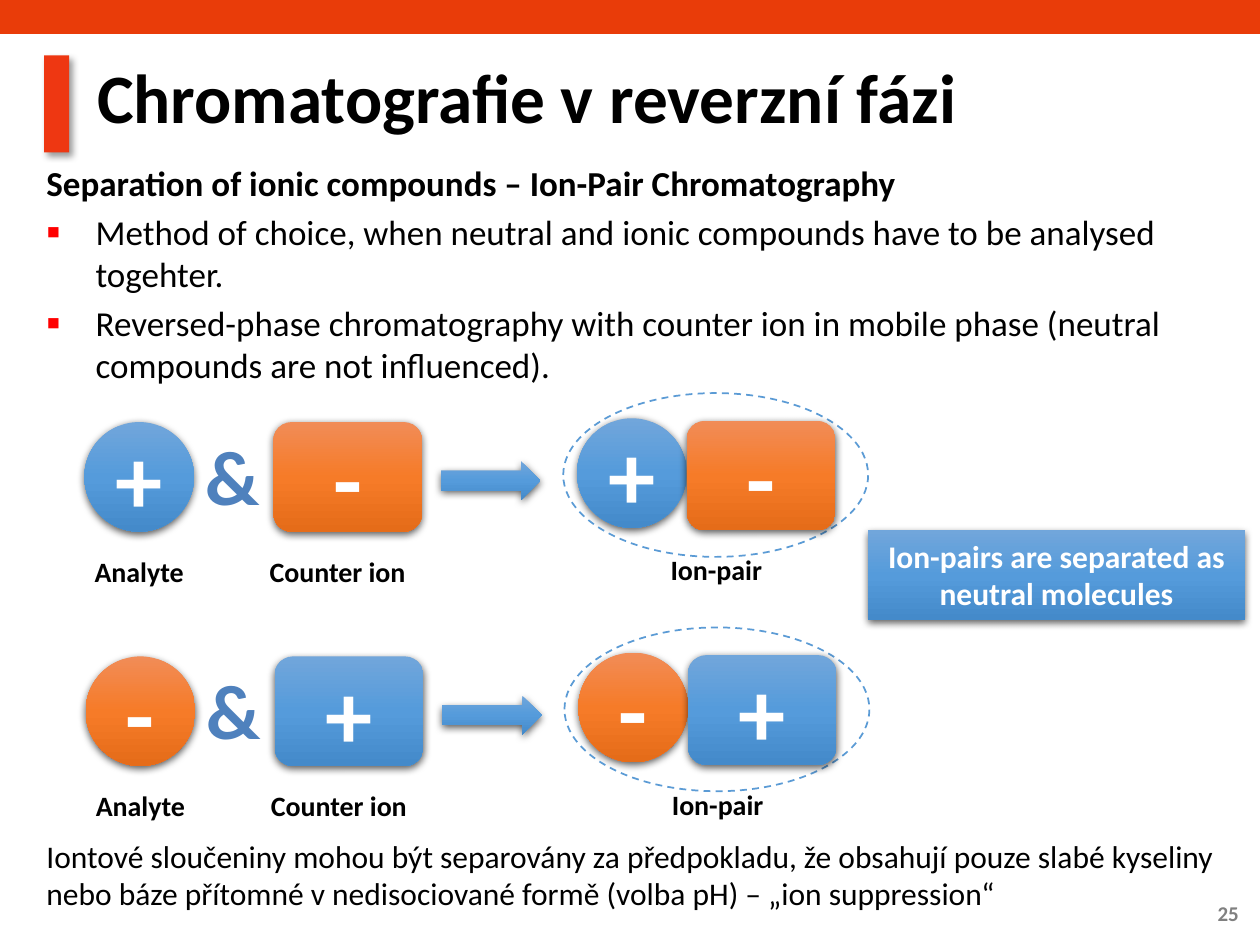
from copy import deepcopy

from lxml import etree
from pptx import Presentation
from pptx.dml.color import RGBColor
from pptx.enum.dml import MSO_LINE
from pptx.enum.shapes import MSO_SHAPE
from pptx.enum.text import MSO_ANCHOR, PP_ALIGN
from pptx.oxml.ns import qn
from pptx.util import Inches, Pt

RECTANGLE, OVAL = MSO_SHAPE.RECTANGLE, MSO_SHAPE.OVAL
ROUNDED, ARROW = MSO_SHAPE.ROUNDED_RECTANGLE, MSO_SHAPE.RIGHT_ARROW
LEFT, CENTER, RIGHT = PP_ALIGN.LEFT, PP_ALIGN.CENTER, PP_ALIGN.RIGHT
TOP, MIDDLE = MSO_ANCHOR.TOP, MSO_ANCHOR.MIDDLE
DASH = MSO_LINE.DASH

FONT = "Calibri"
COLORS = {
    "band": "E93C09", "marker": "EE3712", "text": "000000", "white": "FFFFFF",
    "number": "808080", "bullet": "FF0000", "ampersand": "4F81BD", "outline": "5B9BD5",
}
GRADIENTS = {
    "blue": ("71A6DB", "559BDB", "448ACA"),
    "orange": ("F18C57", "F67B28", "E56C19"),
}
MARKER_SHADOW = {"alpha": 40, "blur": 4, "distance": 3, "angle": 45}
SOFT_SHADOW = {"alpha": 63, "blur": 4.5, "distance": 1.5, "angle": 90}

TITLE = "Chromatografie v reverzní fázi"
HEADING = "Separation of ionic compounds – Ion-Pair Chromatography"
BULLETS = [
    "Method of choice, when neutral and ionic compounds have to be analysed togehter.",
    "Reversed-phase chromatography with counter ion in mobile phase (neutral compounds are not influenced).",
]
CALLOUT = "Ion-pairs are separated as neutral molecules"
FOOTNOTE = (
    "Iontové sloučeniny mohou být separovány za předpokladu, že obsahují pouze slabé kyseliny "
    "nebo báze přítomné v nedisociované formě (volba pH) – „ion suppression“"
)
PAGE_NUMBER = "25"

ION_COLORS = {"+": "blue", "-": "orange"}
ROWS = [("+", "-"), ("-", "+")]
ROW_ORIGIN, ROW_STEP = (0.67, 3.35), (0.01, 1.86)
ION_SIZE, COUNTER_WIDTH = 0.87, 1.18
LABELS = [
    ("Analyte", -0.47, 1, 1.81),
    ("Counter ion", 1.34, 1, 1.34),
    ("Ion-pair", 4.11, 0.99, 1.81),
]


def rgb(name):
    return RGBColor.from_string(COLORS[name])


def style(para, size, color="text", bold=True, align=LEFT):
    para.alignment = align
    para.font.name, para.font.size, para.font.bold = FONT, Pt(size), bold
    para.font.color.rgb = rgb(color)


def write(shape, text, size, color="text", bold=True, align=LEFT, anchor=TOP):
    frame = shape.text_frame
    frame.word_wrap, frame.vertical_anchor = True, anchor
    frame.text = text
    style(frame.paragraphs[0], size, color, bold, align)


def add_text(page, place, text, size, **options):
    box = page.shapes.add_textbox(*map(Inches, place))
    write(box, text, size, **options)
    return box


def add_plain(page, kind, place):
    shape = page.shapes.add_shape(kind, *map(Inches, place))
    shape.shadow.inherit = False
    shape.line.fill.background()
    return shape


def add_shadow(shape, alpha, blur, distance, angle):
    effects = shape._element.spPr.find(qn("a:effectLst"))
    shadow = etree.SubElement(
        effects, qn("a:outerShdw"), blurRad=str(Pt(blur)), dist=str(Pt(distance)),
        dir=str(angle * 60000), algn="ctr", rotWithShape="0")
    tint = etree.SubElement(shadow, qn("a:srgbClr"), val="000000")
    etree.SubElement(tint, qn("a:alpha"), val=str(alpha * 1000))


def add_glossy(page, kind, place, gradient):
    shape = add_plain(page, kind, place)
    shape.fill.gradient()
    shape.fill.gradient_angle = 270
    stops = shape._element.spPr.find(qn("a:gradFill")).find(qn("a:gsLst"))
    stops.insert(1, deepcopy(stops[0]))
    for index, (stop, color) in enumerate(zip(shape.fill.gradient_stops, GRADIENTS[gradient])):
        stop.position = index / 2
        stop.color.rgb = RGBColor.from_string(color)
    add_shadow(shape, **SOFT_SHADOW)
    return shape


def add_ion(page, kind, place, sign):
    ion = add_glossy(page, kind, place, ION_COLORS[sign])
    write(ion, sign, 54, "white", align=CENTER, anchor=MIDDLE)


def add_row(page, index, analyte, counter):
    left, top = (start + index * step for start, step in zip(ROW_ORIGIN, ROW_STEP))
    pair_left = left + 3.91
    add_ion(page, OVAL, (left, top, ION_SIZE, ION_SIZE), analyte)
    add_ion(page, OVAL, (pair_left, top - 0.03, ION_SIZE, ION_SIZE), analyte)
    ring = add_plain(page, OVAL, (left + 3.8, top - 0.23, 2.42, 1.3))
    ring.fill.background()
    ring.line.color.rgb = rgb("outline")
    ring.line.width, ring.line.dash_style = Pt(1), DASH
    for text, across, down, width in LABELS:
        add_text(page, (left + across, top + down, width, 0.37), text, 16, align=CENTER)
    add_text(page, (left + 0.86, top, 0.95, 0.84), "&", 44, color="ampersand")
    add_glossy(page, ARROW, (left + 2.83, top + 0.31, 0.79, 0.31), "blue")
    add_ion(page, ROUNDED, (left + 1.5, top, COUNTER_WIDTH, ION_SIZE), counter)
    add_ion(page, ROUNDED, (pair_left + ION_SIZE, top - 0.01, COUNTER_WIDTH, ION_SIZE), counter)


def add_bullet(frame, text):
    para = frame.add_paragraph()
    para.text = text
    properties = para._p.get_or_add_pPr()
    properties.set("marL", str(Inches(0.39)))
    properties.set("indent", str(-Inches(0.39)))
    tint = etree.SubElement(properties, qn("a:buClr"))
    etree.SubElement(tint, qn("a:srgbClr"), val=COLORS["bullet"])
    etree.SubElement(properties, qn("a:buSzPct"), val="115000")
    etree.SubElement(properties, qn("a:buFont"), typeface=FONT)
    etree.SubElement(properties, qn("a:buChar"), char="▪")
    para.space_before = Pt(4)
    style(para, 20, bold=False)


def add_title(page):
    title = page.shapes.title
    title.left, title.top, title.width, title.height = map(Inches, (0.67, 0.45, 9.1, 0.71))
    write(title, TITLE, 39.6, anchor=MIDDLE)
    title.text_frame.paragraphs[0].line_spacing = 0.9


def main():
    """Build the ion-pair chromatography slide."""
    deck = Presentation()
    deck.slide_width, deck.slide_height = Inches(10), Inches(7.5)
    page = deck.slides.add_slide(deck.slide_layouts[5])
    for place, color in [((0, 0, 10, 0.27), "band"), ((0.35, 0.44, 0.2, 0.77), "marker")]:
        bar = add_plain(page, RECTANGLE, place)
        bar.fill.solid()
        bar.fill.fore_color.rgb = rgb(color)
    add_shadow(bar, **MARKER_SHADOW)
    add_text(page, (9.25, 7.05, 0.68, 0.4), PAGE_NUMBER, 12,
             color="number", align=RIGHT, anchor=MIDDLE)
    add_title(page)
    body = add_text(page, (0.27, 1.23, 9.39, 2.05), HEADING, 20)
    for text in BULLETS:
        add_bullet(body.text_frame, text)
    for index, (analyte, counter) in enumerate(ROWS):
        add_row(page, index, analyte, counter)
    callout = add_glossy(page, RECTANGLE, (6.89, 4.21, 2.99, 0.71), "blue")
    write(callout, CALLOUT, 18, "white", align=CENTER)
    add_text(page, (0.27, 6.59, 9.61, 0.71), FOOTNOTE, 18, bold=False)
    deck.save("out.pptx")


if __name__ == "__main__":
    main()
